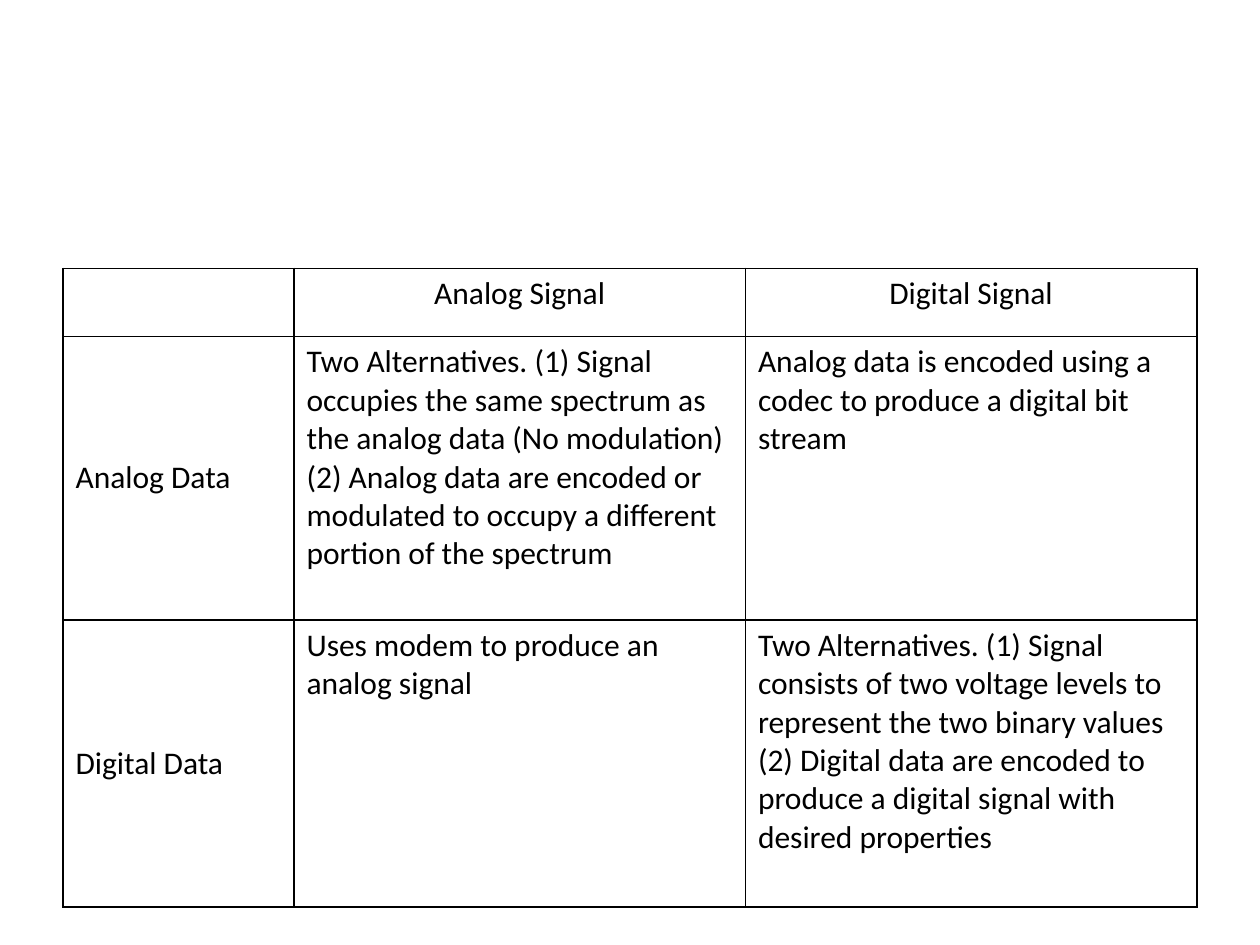
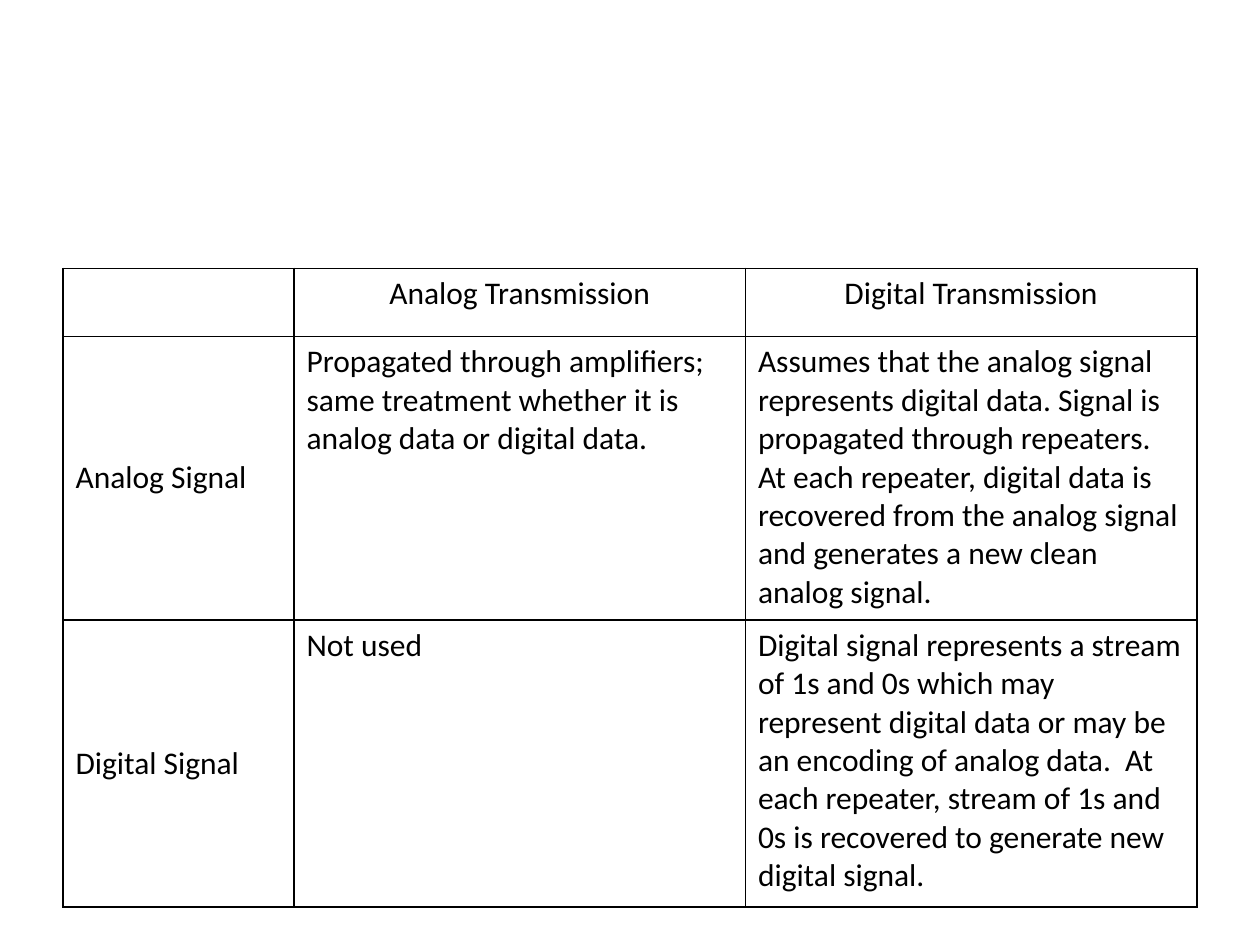
from dataclasses import dataclass
from itertools import product

from lxml.etree import SubElement
from pptx import Presentation
from pptx.dml.color import RGBColor
from pptx.enum.text import MSO_ANCHOR as Anchor, PP_ALIGN as Align
from pptx.oxml.ns import qn
from pptx.util import Inches, Pt

COLORS = {"ink": "000000", "paper": "FFFFFF"}
FONT = "Calibri"
BORDER = Pt(1)

# Page grid: 120 columns by 250 rows
PAGE_WIDTH, PAGE_HEIGHT = Inches(10), Inches(7.5)
COLUMN, ROW = PAGE_WIDTH // 120, PAGE_HEIGHT // 250
TABLE_LEFT, TABLE_TOP = 6, 71
COLUMN_SPANS = (22, 43, 43)
ROW_SPANS = (18, 75, 76)


@dataclass(frozen=True)
class Comparison:
    """Column heads, row labels, and the paragraphs of each body cell."""
    heads: tuple[str, str]
    labels: tuple[str, str]
    body: tuple[tuple[list[str], list[str]], ...]

    def paragraphs(self, row: int, column: int) -> list[str]:
        if row and column:
            return self.body[row - 1][column - 1]
        if row:
            return [self.labels[row - 1]]
        return [self.heads[column - 1]] if column else []


COMPARISONS = (
    Comparison(
        heads=("Analog Signal", "Digital Signal"),
        labels=("Analog Data", "Digital Data"),
        body=(
            (["Two Alternatives. (1) Signal occupies the same spectrum as the analog data "
              "(No modulation)",
              "(2) Analog data are encoded or modulated to occupy a different portion of "
              "the spectrum"],
             ["Analog data is encoded using a codec to produce a digital bit stream"]),
            (["Uses modem to produce an analog signal"],
             ["Two Alternatives. (1) Signal consists of two voltage levels to represent "
              "the two binary values",
              "(2) Digital data are encoded to produce a digital signal with desired "
              "properties"]),
        ),
    ),
    Comparison(
        heads=("Analog Transmission", "Digital Transmission"),
        labels=("Analog Signal", "Digital Signal"),
        body=(
            (["Propagated through amplifiers; same treatment whether it is analog data or "
              "digital data."],
             ["Assumes that the analog signal represents digital data. Signal is "
              "propagated through repeaters. At each repeater, digital data is recovered "
              "from the analog signal and generates a new clean analog signal."]),
            (["Not used"],
             ["Digital signal represents a stream of 1s and 0s which may represent digital "
              "data or may be an encoding of analog data.  At each repeater, stream of 1s "
              "and 0s is recovered to generate new digital signal."]),
        ),
    ),
)


def write(frame, paragraphs: list[str], *, size: int = 18, color: str = "ink",
          align: Align = Align.LEFT) -> None:
    for index, text in enumerate(paragraphs):
        para = frame.add_paragraph() if index else frame.paragraphs[0]
        para.alignment = align
        span = para.add_run()
        span.text = text
        span.font.name, span.font.size, span.font.bold = FONT, Pt(size), False
        span.font.color.rgb = RGBColor.from_string(COLORS[color])


def style_cell(cell) -> None:
    # Borders come before the fill in the cell's properties
    properties = cell._tc.get_or_add_tcPr()
    for side in ("lnL", "lnR", "lnT", "lnB"):
        line = SubElement(properties, qn(f"a:{side}"), w=str(BORDER))
        fill = SubElement(line, qn("a:solidFill"))
        SubElement(fill, qn("a:srgbClr"), val=COLORS["ink"])
    cell.fill.solid()
    cell.fill.fore_color.rgb = RGBColor.from_string(COLORS["paper"])


def add_comparison(page, comparison: Comparison) -> None:
    table = page.shapes.add_table(
        len(ROW_SPANS), len(COLUMN_SPANS), TABLE_LEFT * COLUMN, TABLE_TOP * ROW,
        sum(COLUMN_SPANS) * COLUMN, sum(ROW_SPANS) * ROW).table
    table.first_row = table.horz_banding = False
    for column, span in zip(table.columns, COLUMN_SPANS):
        column.width = span * COLUMN
    for row, span in zip(table.rows, ROW_SPANS):
        row.height = span * ROW

    for row, column in product(range(len(ROW_SPANS)), range(len(COLUMN_SPANS))):
        cell = table.cell(row, column)
        style_cell(cell)
        is_label = row > 0 and column == 0
        cell.vertical_anchor = Anchor.MIDDLE if is_label else Anchor.TOP
        write(cell.text_frame, comparison.paragraphs(row, column),
              align=Align.LEFT if row else Align.CENTER)


def main() -> None:
    deck = Presentation()
    deck.slide_width, deck.slide_height = PAGE_WIDTH, PAGE_HEIGHT
    blank = deck.slide_layouts.get_by_name("Blank")
    for comparison in COMPARISONS:
        add_comparison(deck.slides.add_slide(blank), comparison)
    deck.save("out.pptx")


if __name__ == "__main__":
    main()
